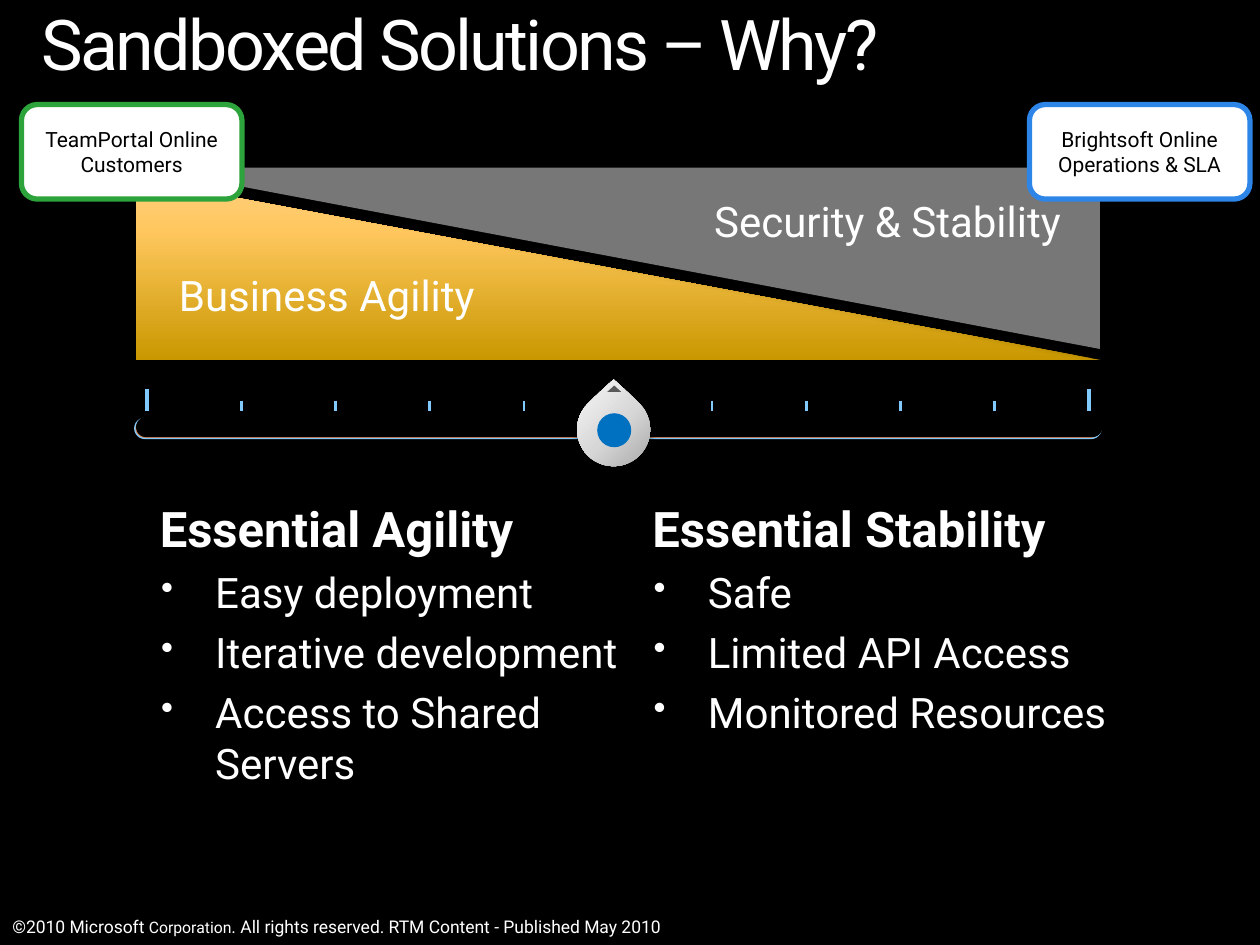
from typing import NamedTuple

from lxml.etree import SubElement
from pptx import Presentation
from pptx.dml.color import RGBColor
from pptx.enum.shapes import MSO_CONNECTOR, MSO_SHAPE
from pptx.enum.text import MSO_ANCHOR, PP_ALIGN
from pptx.oxml.ns import qn
from pptx.util import Emu, Pt

PX = 9144  # 100 px to the inch
WHITE, BLACK, SKY = "FFFFFF", "000000", "80CAFF"


class Box(NamedTuple):
    x: int
    y: int
    w: int
    h: int

    def emu(self) -> list[Emu]:
        return [Emu(v * PX) for v in self]


class Badge(NamedTuple):
    x: int
    text: str
    edge: str


class Column(NamedTuple):
    x: int
    w: int
    head: str
    items: list[str]


BADGES = [
    Badge(17, "TeamPortal Online Customers", "2DA33B"),
    Badge(817, "Brightsoft Online Operations & SLA", "2D86E7"),
]
COLUMNS = [
    Column(117, 383, "Essential Agility",
           ["Easy deployment", "Iterative development", "Access to Shared Servers"]),
    Column(508, 394, "Essential Stability",
           ["Safe", "Limited API Access", "Monitored Resources"]),
]


def rgb(code: str) -> RGBColor:
    return RGBColor.from_string(code)


def paint(shape, fill: str, edge: str = "", width: float = 0) -> None:
    shape.shadow.inherit = False
    shape.fill.solid()
    shape.fill.fore_color.rgb = rgb(fill)
    if edge:
        shape.line.color.rgb = rgb(edge)
        shape.line.width = Pt(width)
    else:
        shape.line.fill.background()


def draw(slide, kind, box: Box, fill: str, edge: str = "", width: float = 0, adj=None):
    shape = slide.shapes.add_shape(kind, *box.emu())
    paint(shape, fill, edge, width)
    if adj is not None:
        shape.adjustments[0] = adj
    return shape


def blend(shape, stops: list[tuple[int, str]]) -> None:
    """Fill upwards through the given stops."""
    shape.fill.gradient()
    shape.fill.gradient_angle = 90
    part = shape.element.spPr.find(qn("a:gradFill")).find(qn("a:gsLst"))
    for old in list(part):
        part.remove(old)
    for pos, code in stops:
        stop = SubElement(part, qn("a:gs"), pos=str(pos * 1000))
        SubElement(stop, qn("a:srgbClr"), val=code)


def shade(shape) -> None:
    """Cast a soft shadow straight down."""
    part = shape.element.spPr.find(qn("a:effectLst"))
    cast = SubElement(part, qn("a:outerShdw"), blurRad=str(Pt(4)), dist=str(Pt(3)),
                      dir="5400000", algn="ctr", rotWithShape="0")
    tone = SubElement(cast, qn("a:srgbClr"), val=BLACK)
    SubElement(tone, qn("a:alpha"), val="43000")


def write(para, text: str, size: float, color: str = WHITE, bold: bool = False,
          track: int = 0) -> None:
    run = para.add_run()
    run.text = text
    font = run.font
    font.name, font.size, font.bold = "Roboto", Pt(size), bold
    font.color.rgb = rgb(color)
    if track:
        run._r.get_or_add_rPr().set("spc", str(track))


def frame(slide, box: Box, inset: bool = True):
    text = slide.shapes.add_textbox(*box.emu()).text_frame
    text.word_wrap = True
    if not inset:
        text.margin_left = text.margin_right = text.margin_top = text.margin_bottom = 0
    return text


def dot(para) -> None:
    props = para._p.get_or_add_pPr()
    props.set("marL", str(44 * PX))
    props.set("indent", str(-43 * PX))
    SubElement(props, qn("a:buSzPct"), val="85000")
    SubElement(props, qn("a:buChar"), char="•")


def tick(slide, x: float, top: int, width: float) -> None:
    spot = Emu(round(x * PX))
    line = slide.shapes.add_connector(
        MSO_CONNECTOR.STRAIGHT, spot, Emu(top * PX), spot, Emu(326 * PX))
    line.line.color.rgb = rgb(SKY)
    line.line.width = Pt(width)
    SubElement(line.element.spPr, qn("a:effectLst"))


def scale(slide) -> None:
    for i in range(11):
        long = i % 5 == 0
        tick(slide, 117 + 74.7 * i, 309 if long else 318, 2.25 if long else 1.5)
    # The black bar leaves only the lower rim of the first one in view
    bar = MSO_SHAPE.ROUNDED_RECTANGLE
    draw(slide, bar, Box(107, 332, 767, 16), "DF8045", SKY, 0.75, 0.5)
    draw(slide, bar, Box(108, 331, 767, 16), BLACK, adj=0.5)


def wedges(slide) -> None:
    gold = draw(slide, MSO_SHAPE.ISOSCELES_TRIANGLE, Box(108, 142, 767, 144), "C99800", adj=0)
    blend(gold, [(0, "C99800"), (72, "FFC75E"), (100, "FFCF7F")])
    shade(gold)
    path = slide.shapes.build_freeform(873, 133, scale=PX)
    path.add_line_segments([(873, 277), (112, 133)], close=True)
    gray = path.convert_to_shape()
    paint(gray, "777777")
    shade(gray)
    for box, text, side in [
        (Box(142, 214, 275, 40), "Business Agility", PP_ALIGN.LEFT),
        (Box(525, 155, 317, 40), "Security & Stability", PP_ALIGN.RIGHT),
    ]:
        para = frame(slide, box, inset=False).paragraphs[0]
        para.alignment = side
        write(para, text, 24)


def marker(slide) -> None:
    drop = draw(slide, MSO_SHAPE.TEAR, Box(458, 312, 58, 58), "D7D7D7", adj=0.968)
    drop.rotation = 315
    blend(drop, [(0, "979797"), (50, "D7D7D7"), (100, WHITE)])
    shade(drop)
    draw(slide, MSO_SHAPE.OVAL, Box(474, 328, 27, 27), "0070C0")
    draw(slide, MSO_SHAPE.ISOSCELES_TRIANGLE, Box(482, 306, 11, 5), "595959")


def column(slide, col: Column) -> None:
    para = frame(slide, Box(col.x, 367, col.w, 100)).paragraphs[0]
    para.line_spacing = 1.5
    write(para, col.head, 28, bold=True)
    text = frame(slide, Box(col.x, 445, col.w, 255))
    for i, item in enumerate(col.items):
        para = text.add_paragraph() if i else text.paragraphs[0]
        if i:
            para.space_before = Pt(5.5)
        dot(para)
        write(para, item, 24)


def badge(slide, tag: Badge) -> None:
    card = draw(slide, MSO_SHAPE.ROUNDED_RECTANGLE, Box(tag.x, 83, 175, 75), WHITE, tag.edge, 3)
    text = card.text_frame
    text.word_wrap = True
    text.vertical_anchor = MSO_ANCHOR.MIDDLE
    para = text.paragraphs[0]
    para.alignment = PP_ALIGN.CENTER
    write(para, tag.text, 12, BLACK)


def main() -> None:
    deck = Presentation()
    deck.slide_width, deck.slide_height = Emu(1000 * PX), Emu(750 * PX)
    slide = deck.slides.add_slide(deck.slide_layouts[6])
    slide.background.fill.solid()
    slide.background.fill.fore_color.rgb = rgb(BLACK)

    # Footer and title
    foot = frame(slide, Box(0, 722, 1000, 28)).paragraphs[0]
    write(foot, "©2010 Microsoft ", 10)
    write(foot, "Corporation", 9)
    write(foot, ". All rights reserved. RTM Content - Published May 2010", 10)
    title = frame(slide, Box(33, 8, 917, 61), inset=False).paragraphs[0]
    title.line_spacing = 0.9
    write(title, "Sandboxed Solutions – Why?", 40, track=-150)

    # Slider between agility and stability
    scale(slide)
    wedges(slide)
    marker(slide)

    # Lists and corner badges
    for col in COLUMNS:
        column(slide, col)
    for tag in BADGES:
        badge(slide, tag)
    deck.save("out.pptx")


if __name__ == "__main__":
    main()
